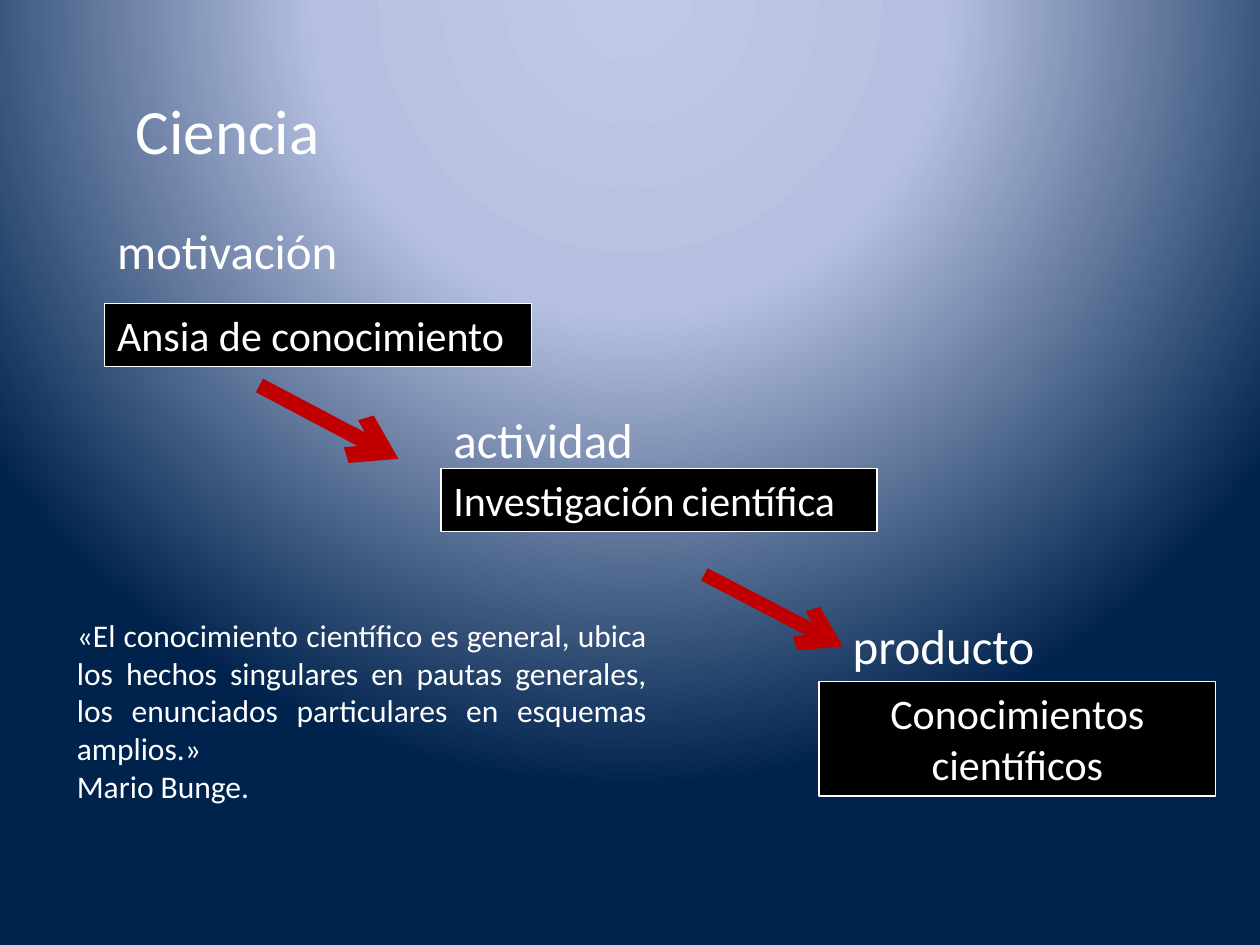
import pptx
import pptx.dml.color
import pptx.enum.shapes
import pptx.enum.text
import pptx.oxml
import pptx.oxml.ns
import pptx.util
import lxml.etree

Cm = pptx.util.Cm
Pt = pptx.util.Pt
ALIGN = pptx.enum.text.PP_ALIGN

COLORS = {"text": "FFFFFF", "box": "000000", "border": "FFFFFF", "arrow": "C00000"}
GRADIENT = [(0, "BFC9E5"), (40, "B5C0E0"), (100, "00234D")]
GRADIENT_CENTRE = {"l": 50, "t": -80, "r": 50, "b": 180}

QUOTE = (
    "«El conocimiento científico es general, ubica los hechos singulares en pautas "
    "generales, los enunciados particulares en esquemas amplios.»"
)

LABELS = [
    ((2.49, 1.73, 20.6, 1.8), [[("Ciencia", 36)]], ALIGN.LEFT),
    ((2.11, 4.32, 7.59, 1.45), [[("motivación", 28)]], ALIGN.LEFT),
    ((8.89, 8.13, 7.59, 1.45), [[("actividad", 28)]], ALIGN.LEFT),
    ((16.94, 12.29, 6.6, 1.45), [[("producto", 28)]], ALIGN.LEFT),
    ((1.3, 12.29, 11.99, 4.11), [[(QUOTE, 18)], [("Mario Bunge.", 18)]], ALIGN.JUSTIFY),
]
STAGES = [
    ((2.11, 6.12, 8.61, 1.27), [[("Ansia de conocimiento", 24)]], ALIGN.LEFT),
    ((8.89, 9.45, 8.79, 1.27),
     [[("Investigación", 24), (" ", 18), ("científica", 24)]], ALIGN.LEFT),
    ((16.51, 13.74, 8, 2.31), [[("Conocimientos científicos", 24)]], ALIGN.CENTER),
]
ARROWS = [
    ((5.23, 7.77, 8.03, 9.25), 8.75),
    ((14.2, 11.58, 16.99, 13.03), 8),
]


def color(name):
    return pptx.dml.color.RGBColor.from_string(COLORS[name])


def set_all(target, values):
    for name, value in values.items():
        setattr(target, name, value)


def paint_background(page):
    page.background.fill.gradient()
    tag = pptx.oxml.ns.qn
    old = next(page.element.iter(tag("a:gradFill")))
    stops = "".join(
        f'<a:gs pos="{position * 1000}"><a:srgbClr val="{value}"/></a:gs>'
        for position, value in GRADIENT
    )
    centre = " ".join(f'{side}="{value * 1000}"' for side, value in GRADIENT_CENTRE.items())
    new = pptx.oxml.parse_xml(
        f'<a:gradFill {pptx.oxml.ns.nsdecls("a")} rotWithShape="1"><a:gsLst>{stops}</a:gsLst>'
        f'<a:path path="circle"><a:fillToRect {centre}/></a:path></a:gradFill>'
    )
    old.getparent().replace(old, new)


def write(box, paragraphs, alignment):
    frame = box.text_frame
    set_all(frame, {
        "word_wrap": True,
        "auto_size": pptx.enum.text.MSO_AUTO_SIZE.SHAPE_TO_FIT_TEXT,
        "vertical_anchor": pptx.enum.text.MSO_ANCHOR.TOP,
    })
    for index, spans in enumerate(paragraphs):
        para = frame.add_paragraph() if index else frame.paragraphs[0]
        para.alignment = alignment
        for text, size in spans:
            span = para.add_run()
            span.text = text
            set_all(span.font, {"name": "Calibri", "size": Pt(size)})
            span.font.color.rgb = color("text")


def add_stage(page, place, paragraphs, alignment):
    box = page.shapes.add_shape(
        pptx.enum.shapes.MSO_SHAPE.RECTANGLE, *[Cm(value) for value in place])
    box.shadow.inherit = False
    box.fill.solid()
    box.fill.fore_color.rgb = color("box")
    box.line.color.rgb = color("border")
    box.line.width = Pt(0.75)
    write(box, paragraphs, alignment)


def add_label(page, place, paragraphs, alignment):
    write(page.shapes.add_textbox(*[Cm(value) for value in place]), paragraphs, alignment)


def add_arrow(page, ends, width):
    arrow = page.shapes.add_connector(
        pptx.enum.shapes.MSO_CONNECTOR.STRAIGHT, *[Cm(value) for value in ends])
    arrow.line.color.rgb = color("arrow")
    arrow.line.width = Pt(width)
    tag = pptx.oxml.ns.qn
    properties = arrow.element.spPr
    lxml.etree.SubElement(properties.find(tag("a:ln")), tag("a:tailEnd"), type="arrow")
    lxml.etree.SubElement(properties, tag("a:effectLst"))


def main():
    deck = pptx.Presentation()
    set_all(deck, {"slide_width": Cm(25.4), "slide_height": Cm(19.05)})
    page = deck.slides.add_slide(deck.slide_layouts[6])
    paint_background(page)
    for stage in STAGES:
        add_stage(page, *stage)
    for label in LABELS:
        add_label(page, *label)
    for arrow in ARROWS:
        add_arrow(page, *arrow)
    deck.save("out.pptx")


if __name__ == "__main__":
    main()
